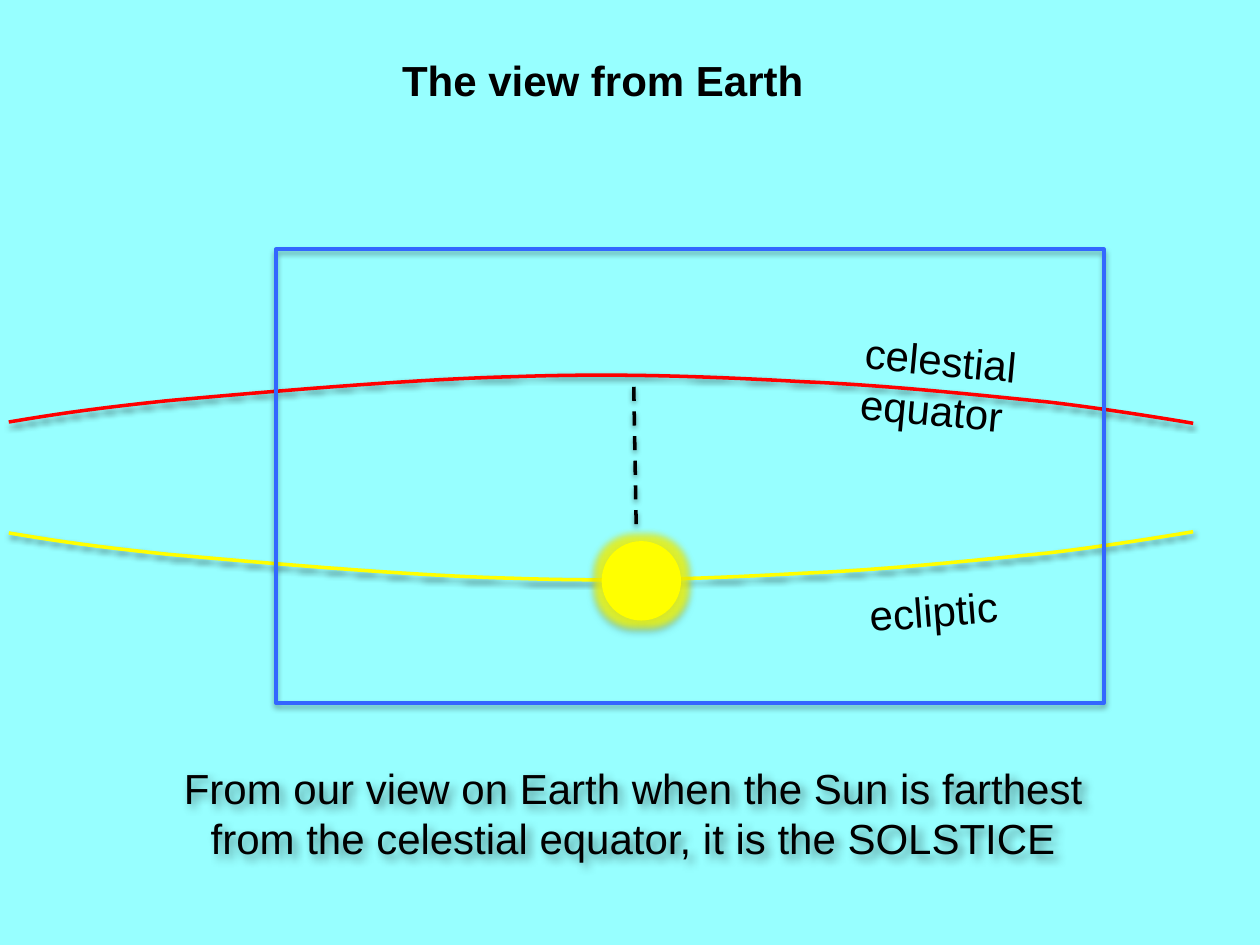
from lxml.etree import SubElement as Sub
from pptx import Presentation
from pptx.dml.color import RGBColor
from pptx.enum.dml import MSO_LINE as Dash
from pptx.enum.shapes import MSO_CONNECTOR as Conn, MSO_SHAPE as Kind
from pptx.enum.text import MSO_ANCHOR as Anchor, MSO_AUTO_SIZE as Fit, PP_ALIGN as Align
from pptx.oxml.ns import qn
from pptx.util import Inches, Pt

# Content: text, box in inches, format
TITLE = ("The view from Earth ", (2.74, 0.38, 4.18, 0.4))
LABELS = [
    ("celestial equator", (6.77, 2.65, 2.43, 0.4), dict(turn=5.3)),
    ("ecliptic", (6.8, 4.59, 1.28, 0.5), dict(turn=-4.5)),
    ("From our view on Earth when the Sun is farthest from the celestial "
     "equator, it is the SOLSTICE", (1.35, 6, 7.35, 0.91),
     dict(align=Align.CENTER, shade=(43, 5, 3, 45))),
]
FRAME = (2.19, 1.98, 6.57, 3.6)
SUN = (4.78, 4.3, 0.62, 0.62)
GAP = ((5.03, 3.07), (5.05, 4.22))

# Equator as joined cubic curves; the ecliptic is its mirror image
EQUATOR = [
    (0.07, 3.35), (0.37, 3.3), (0.67, 3.25), (1.34, 3.18),
    (2.01, 3.12), (3.24, 3.01), (4.08, 2.99),
    (4.92, 2.96), (5.66, 2.99), (6.37, 3.03),
    (7.08, 3.06), (7.8, 3.14), (8.31, 3.19),
    (8.83, 3.25), (9.47, 3.36), (9.47, 3.36),
]
MIRROR = 7.58  # sum of the heights of paired points
ECLIPTIC = [(x, MIRROR - y) for x, y in EQUATOR]

# Shadows: opacity %, blur pt, distance pt, angle
THIN = (38, 3.1, 1.6, 90)
BROAD = (35, 3.1, 1.8, 90)


def color(code):
    return RGBColor.from_string(code)


def inch(nums):
    return [Inches(n) for n in nums]


def tint(node, code, share):
    clr = Sub(node, qn("a:srgbClr"), val=code)
    Sub(clr, qn("a:alpha"), val=str(share * 1000))


def effect(shape, shade=None, glow=None):
    props = shape._element.spPr
    for old in props.findall(qn("a:effectLst")):
        props.remove(old)
    group = Sub(props, qn("a:effectLst"))
    if glow:
        code, size, share = glow
        tint(Sub(group, qn("a:glow"), rad=str(Pt(size))), code, share)
    if shade:
        share, blur, dist, angle = shade
        node = Sub(group, qn("a:outerShdw"), blurRad=str(Pt(blur)),
                   dist=str(Pt(dist)), dir=str(angle * 60000), rotWithShape="0")
        tint(node, "000000", share)


def stroke(shape, code, width, shade, **kw):
    shape.line.color.rgb = color(code)
    shape.line.width = Pt(width)
    effect(shape, shade, **kw)


def write(shape, text, box, size=24, bold=False, align=Align.LEFT, turn=0, shade=None):
    shape.left, shape.top, shape.width, shape.height = inch(box)
    shape.rotation = turn
    frame = shape.text_frame
    frame.word_wrap = True
    frame.auto_size = Fit.NONE
    frame.vertical_anchor = Anchor.TOP
    para = frame.paragraphs[0]
    para.alignment = align
    run = para.add_run()
    run.text = text
    run.font.name, run.font.size, run.font.bold = "Arial", Pt(size), bold
    run.font.color.rgb = color("000000")
    if shade:
        effect(shape, shade)


def curve(shapes, knots, code):
    pen = shapes.build_freeform(*inch(knots[0]))
    pen.add_line_segments([inch(knot) for knot in knots[1:]], close=False)
    arc = pen.convert_to_shape()
    # Join each three straight steps into one cubic curve
    steps = list(arc._element.iter(qn("a:lnTo")))
    track = steps[0].getparent()
    for i in range(0, len(steps), 3):
        bend = Sub(track, qn("a:cubicBezTo"))
        for step in steps[i:i + 3]:
            bend.append(step[0])
            track.remove(step)
    arc.fill.background()
    stroke(arc, code, 2, THIN)


def main():
    deck = Presentation()
    deck.slide_width, deck.slide_height = inch((10, 7.5))
    slide = deck.slides.add_slide(deck.slide_layouts[5])
    slide.background.fill.solid()
    slide.background.fill.fore_color.rgb = color("97FFFF")
    shapes = slide.shapes

    # Title and labels
    write(shapes.title, *TITLE, bold=True, align=Align.CENTER)
    for text, box, form in LABELS:
        write(shapes.add_textbox(*inch(box)), text, box, **form)

    # Paths on the sky
    curve(shapes, EQUATOR, "FF0000")
    curve(shapes, ECLIPTIC, "FFFF00")

    # Sun with its glow
    sun = shapes.add_shape(Kind.OVAL, *inch(SUN))
    sun.fill.solid()
    sun.fill.fore_color.rgb = color("FFFF00")
    stroke(sun, "FFFF00", 0.75, BROAD, glow=("FFFF00", 8, 75))

    # Distance from equator to Sun
    start, end = GAP
    gap = shapes.add_connector(Conn.STRAIGHT, *inch(start + end))
    gap.line.dash_style = Dash.DASH
    stroke(gap, "000000", 2, THIN)

    # Field of view
    frame = shapes.add_shape(Kind.RECTANGLE, *inch(FRAME))
    frame.fill.background()
    stroke(frame, "3366FF", 2.25, BROAD)

    deck.save("out.pptx")


if __name__ == "__main__":
    main()
